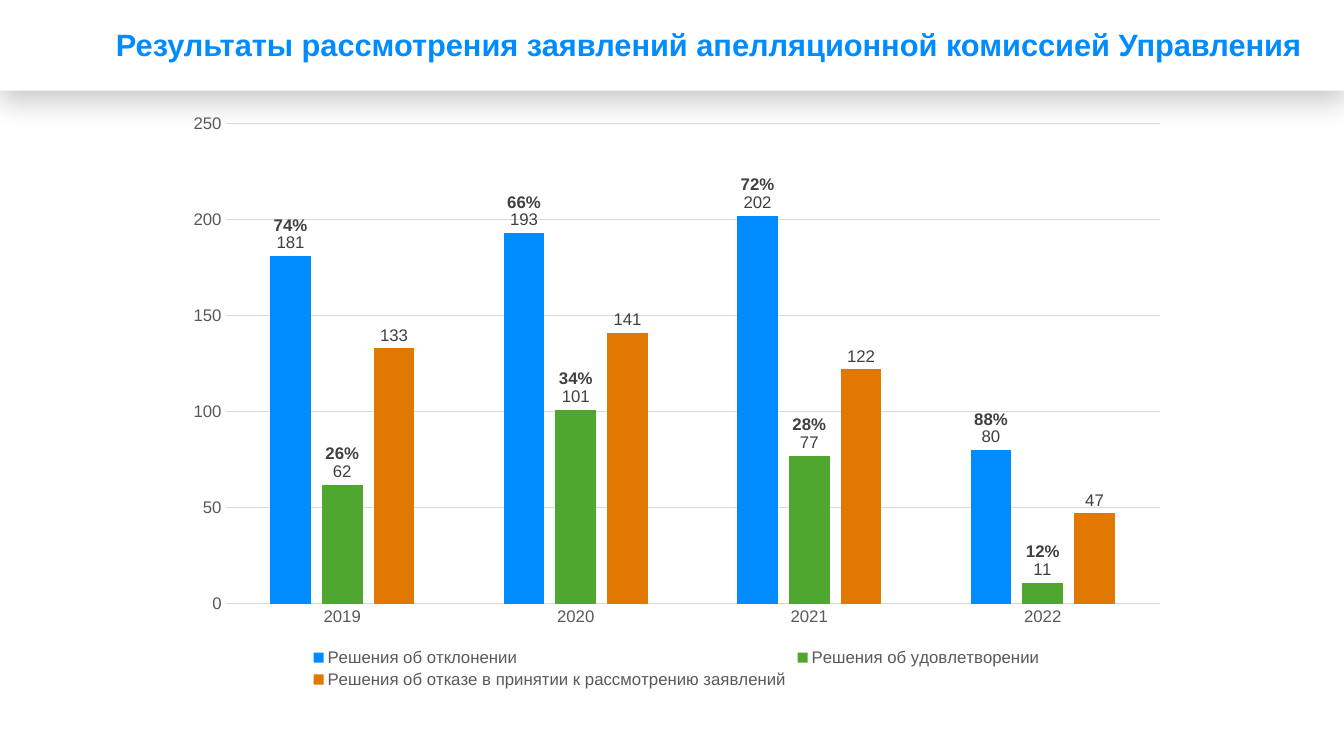
from dataclasses import dataclass

from lxml import etree
from pptx import Presentation
from pptx.chart.data import CategoryChartData
from pptx.dml.color import RGBColor
from pptx.enum.chart import XL_CHART_TYPE as ChartType
from pptx.enum.chart import XL_LABEL_POSITION as LabelPos
from pptx.enum.chart import XL_LEGEND_POSITION as LegendPos
from pptx.enum.chart import XL_TICK_MARK as TickMark
from pptx.enum.shapes import MSO_SHAPE as Shape
from pptx.enum.text import MSO_ANCHOR as Anchor
from pptx.enum.text import MSO_AUTO_SIZE as AutoSize
from pptx.enum.text import PP_ALIGN as Align
from pptx.oxml.ns import qn
from pptx.util import Inches, Pt

FONT = "Arial"
WHITE = RGBColor(0xFF, 0xFF, 0xFF)
BLUE = RGBColor(0x00, 0x8C, 0xFF)
GREEN = RGBColor(0x4F, 0xA7, 0x30)
ORANGE = RGBColor(0xE1, 0x79, 0x00)
LABEL_GRAY = RGBColor(0x40, 0x40, 0x40)
AXIS_GRAY = RGBColor(0x59, 0x59, 0x59)
LINE_GRAY = RGBColor(0xD9, 0xD9, 0xD9)


@dataclass
class Decision:
    name: str
    counts: tuple[int, ...]
    color: RGBColor
    shares: tuple[str, ...] = ()


YEARS = ("2019", "2020", "2021", "2022")
DECISIONS = (
    Decision("Решения об отклонении", (181, 193, 202, 80), BLUE,
             ("74%", "66%", "72%", "88%")),
    Decision("Решения об удовлетворении", (62, 101, 77, 11), GREEN,
             ("26%", "34%", "28%", "12%")),
    Decision("Решения об отказе в принятии к рассмотрению заявлений",
             (133, 141, 122, 47), ORANGE),
)


def set_font(font, size: float = 12, color: RGBColor = AXIS_GRAY,
             bold: bool = False) -> None:
    font.name = FONT
    font.size = Pt(size)
    font.bold = bold
    font.color.rgb = color


def add_text(p, text: str, **fmt) -> None:
    r = p.add_run()
    r.text = text
    set_font(r.font, **fmt)


def set_line(line) -> None:
    line.color.rgb = LINE_GRAY
    line.width = Pt(0.75)


def add_header(slide) -> None:
    sp = slide.shapes.add_shape(Shape.RECTANGLE, 0, 0, Inches(13.33), Inches(0.9))
    sp.fill.solid()
    sp.fill.fore_color.rgb = WHITE
    sp.line.fill.background()
    sp.shadow.inherit = False
    effects = sp._element.spPr.find(qn("a:effectLst"))
    shadow = etree.SubElement(effects, qn("a:outerShdw"), blurRad=str(Pt(20)),
                              dist=str(Pt(6)), dir="5400000", algn="t",
                              rotWithShape="0")
    black = etree.SubElement(shadow, qn("a:srgbClr"), val="000000")
    etree.SubElement(black, qn("a:alpha"), val="22000")


def add_title(slide, text: str) -> None:
    sp = slide.shapes.title
    sp.left, sp.top = Inches(1.05), Inches(0)
    sp.width, sp.height = Inches(12.28), Inches(0.92)
    tf = sp.text_frame
    tf.word_wrap = True
    tf.auto_size = AutoSize.NONE
    tf.vertical_anchor = Anchor.MIDDLE
    p = tf.paragraphs[0]
    p.alignment = Align.LEFT
    p.line_spacing = 0.9
    add_text(p, text, size=22, color=BLUE, bold=True)
    slide.shapes._spTree.append(sp._element)


def format_series(series, decision: Decision) -> None:
    series.format.fill.solid()
    series.format.fill.fore_color.rgb = decision.color
    series.invert_if_negative = False
    labels = series.data_labels
    labels.show_value = True
    labels.position = LabelPos.OUTSIDE_END
    set_font(labels.font, color=LABEL_GRAY)
    for i, share in enumerate(decision.shares):
        label = series.points[i].data_label
        tf = label.text_frame
        add_text(tf.paragraphs[0], share, color=LABEL_GRAY, bold=True)
        add_text(tf.add_paragraph(), str(decision.counts[i]), color=LABEL_GRAY)
        label.position = LabelPos.OUTSIDE_END


def add_decisions_chart(slide) -> None:
    data = CategoryChartData()
    data.categories = YEARS
    for decision in DECISIONS:
        data.add_series(decision.name, decision.counts)
    chart = slide.shapes.add_chart(ChartType.COLUMN_CLUSTERED, Inches(1.72),
                                   Inches(1.02), Inches(9.98), Inches(5.85),
                                   data).chart
    set_font(chart.font)
    chart.has_title = False
    chart.has_legend = True
    chart.legend.position = LegendPos.BOTTOM
    chart.legend.include_in_layout = False
    set_font(chart.legend.font)

    plot = chart.plots[0]
    plot.vary_by_categories = False
    plot.gap_width = 219
    plot.overlap = -27
    for series, decision in zip(plot.series, DECISIONS):
        format_series(series, decision)

    years, counts = chart.category_axis, chart.value_axis
    for axis in (years, counts):
        axis.major_tick_mark = axis.minor_tick_mark = TickMark.NONE
        set_font(axis.tick_labels.font)
    set_line(years.format.line)
    counts.format.line.fill.background()
    counts.minimum_scale, counts.maximum_scale, counts.major_unit = 0, 250, 50
    counts.has_major_gridlines = True
    set_line(counts.major_gridlines.format.line)


def main() -> None:
    prs = Presentation()
    prs.slide_width, prs.slide_height = Inches(13.33), Inches(7.5)
    slide = prs.slides.add_slide(prs.slide_layouts[5])
    add_header(slide)
    add_decisions_chart(slide)
    add_title(slide, "Результаты рассмотрения заявлений апелляционной комиссией Управления")
    prs.save("out.pptx")


if __name__ == "__main__":
    main()
